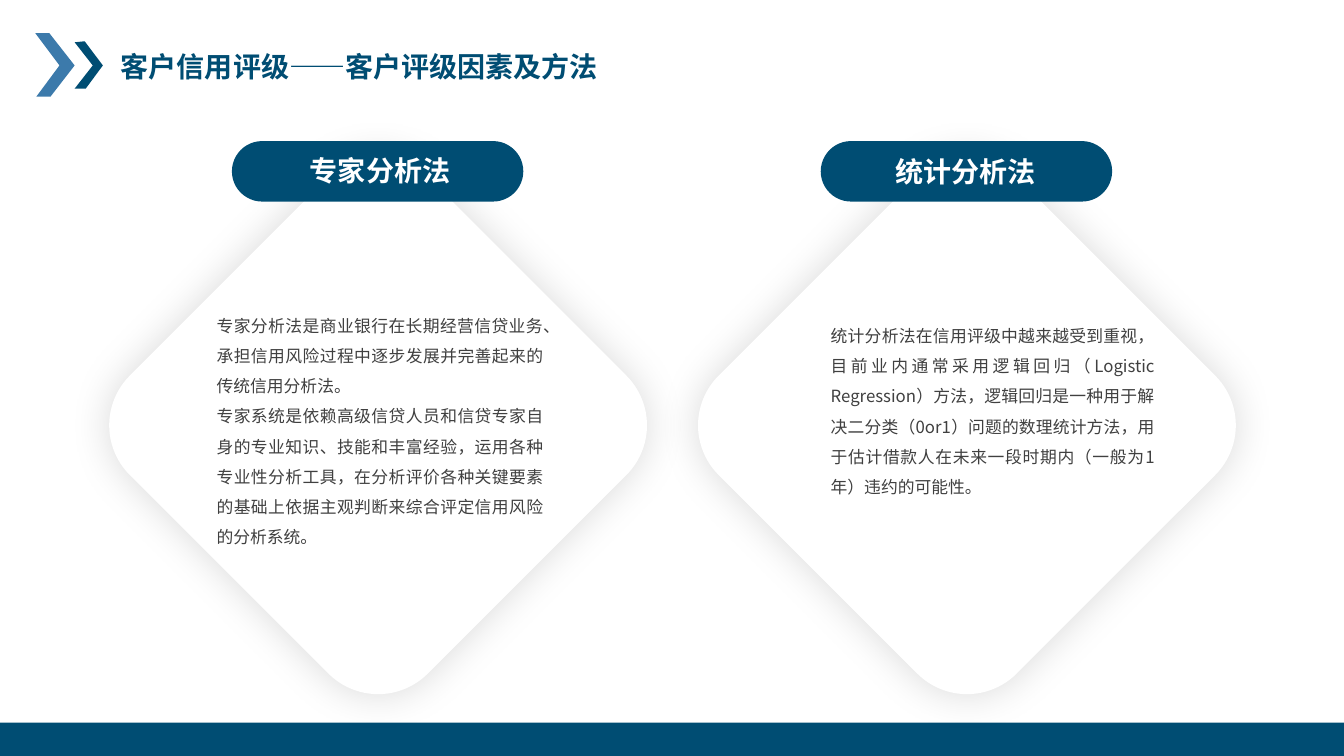
"""Build a slide comparing two customer credit rating methods."""
from dataclasses import dataclass

from lxml.etree import SubElement
from pptx import Presentation
from pptx.dml.color import RGBColor
from pptx.enum.lang import MSO_LANGUAGE_ID
from pptx.enum.shapes import MSO_SHAPE
from pptx.enum.text import MSO_ANCHOR, MSO_AUTO_SIZE, PP_ALIGN
from pptx.oxml.ns import qn
from pptx.shapes.autoshape import Shape
from pptx.shapes.shapetree import GroupShapes
from pptx.util import Inches, Pt

NAVY, BLUE, WHITE, GREY = "004D73", "3C7AAB", "FFFFFF", "404040"
FONT = "Noto Sans CJK SC"
HEADING = {"size": Pt(20), "bold": True}
BODY = {"size": Pt(12), "bold": False}
LEFT_ALIGNED = {"alignment": PP_ALIGN.LEFT}
CENTRED = {"alignment": PP_ALIGN.CENTER}
JUSTIFIED = {"alignment": PP_ALIGN.JUSTIFY, "line_spacing": 1.5}
Box = tuple[float, float, float, float]


@dataclass(frozen=True)
class Method:
    """A rating method with its card, label and explanation."""
    name: str
    paragraphs: list[str]
    diamond_left: float
    pill_left: float
    name_box: Box
    body_box: Box


@dataclass(frozen=True)
class Chevron:
    """An arrow-shaped outline beside the title."""
    points: list[tuple[float, float]]
    color: str


METHODS = [
    Method(
        "专家分析法",
        ["专家分析法是商业银行在长期经营信贷业务、承担信用风险过程中逐步发展并完善起来的传统信用分析法。",
         "专家系统是依赖高级信贷人员和信贷专家自身的专业知识、技能和丰富经验，运用各种专业性分析工具，"
         "在分析评价各种关键要素的基础上依据主观判断来综合评定信用风险的分析系统。"],
        1.66, 2.3, (2.97, 1.47, 1.6, 0.44), (2.05, 2.98, 3.44, 2.49)),
    Method(
        "统计分析法",
        ["统计分析法在信用评级中越来越受到重视，目前业内通常采用逻辑回归（Logistic Regression）方法，"
         "逻辑回归是一种用于解决二分类（0or1）问题的数理统计方法，"
         "用于估计借款人在未来一段时期内（一般为1年）违约的可能性。"],
        7.5, 8.14, (8.78, 1.48, 1.6, 0.44), (8.14, 3.08, 3.41, 1.88)),
]

CHEVRONS = [
    Chevron([(0.35, 0.33), (0.49, 0.33), (0.74, 0.65),
             (0.5, 0.96), (0.36, 0.96), (0.59, 0.65)], BLUE),
    Chevron([(0.74, 0.42), (0.84, 0.41), (1.02, 0.65),
             (0.85, 0.88), (0.74, 0.88), (0.92, 0.65)], NAVY),
]


def paint(shape: Shape, color: str) -> None:
    """Give a shape a flat fill with neither line nor shadow."""
    shape.shadow.inherit = False
    shape.fill.solid()
    shape.fill.fore_color.rgb = RGBColor.from_string(color)
    shape.line.fill.background()


def add_block(shapes: GroupShapes, kind: MSO_SHAPE, box: Box, color: str) -> Shape:
    """Add a flat preset shape."""
    block = shapes.add_shape(kind, *map(Inches, box))
    paint(block, color)
    return block


def add_glow(shape: Shape) -> None:
    """Add a soft, centred outer shadow."""
    effects = shape.element.spPr.find(qn("a:effectLst"))
    shadow = SubElement(effects, qn("a:outerShdw"), blurRad=str(Pt(30)), dist="0",
                        dir="0", algn="ctr", rotWithShape="0")
    tint = SubElement(shadow, qn("a:srgbClr"), val="000000")
    SubElement(tint, qn("a:alpha"), val="15000")


def add_text(shapes: GroupShapes, box: Box, paragraphs: list[str], color: str,
             font_format: dict, paragraph_format: dict, wrap: bool = True) -> None:
    """Add a text box with one format for all its paragraphs."""
    frame = shapes.add_textbox(*map(Inches, box)).text_frame
    frame_format = {"word_wrap": wrap, "auto_size": MSO_AUTO_SIZE.SHAPE_TO_FIT_TEXT,
                    "vertical_anchor": MSO_ANCHOR.TOP}
    shared_font = {"name": FONT, "language_id": MSO_LANGUAGE_ID.SIMPLIFIED_CHINESE}
    frame.text = "\n".join(paragraphs)
    apply_format(frame, frame_format)
    for paragraph in frame.paragraphs:
        apply_format(paragraph, paragraph_format)
        for run in paragraph.runs:
            apply_format(run.font, shared_font | font_format)
            run.font.color.rgb = RGBColor.from_string(color)
            SubElement(run.font._element, qn("a:ea"), typeface=FONT)


def apply_format(target: object, values: dict) -> None:
    """Set each named attribute on the target."""
    for name, value in values.items():
        setattr(target, name, value)


def add_chevron(shapes: GroupShapes, chevron: Chevron) -> None:
    """Draw a chevron as a closed outline."""
    start, *rest = [(Inches(x), Inches(y)) for x, y in chevron.points]
    outline = shapes.build_freeform(*start)
    outline.add_line_segments(rest, close=True)
    paint(outline.convert_to_shape(), chevron.color)


def add_method(shapes: GroupShapes, method: Method) -> None:
    """Draw a diamond card with its explanation and label."""
    diamond = add_block(shapes, MSO_SHAPE.ROUNDED_RECTANGLE,
                        (method.diamond_left, 2.13, 4.18, 4.18), WHITE)
    diamond.rotation = 45
    add_glow(diamond)
    add_text(shapes, method.body_box, method.paragraphs, GREY, BODY, JUSTIFIED)
    pill = add_block(shapes, MSO_SHAPE.ROUNDED_RECTANGLE,
                     (method.pill_left, 1.4, 2.89, 0.6), NAVY)
    pill.adjustments[0] = 0.5
    add_text(shapes, method.name_box, [method.name], WHITE, HEADING, CENTRED, wrap=False)


def main() -> None:
    """Build and save the slide."""
    deck = Presentation()
    deck.slide_width, deck.slide_height = Inches(13.33), Inches(7.5)
    slide = deck.slides.add_slide(deck.slide_layouts[6])
    slide.background.fill.solid()
    slide.background.fill.fore_color.rgb = RGBColor.from_string(WHITE)

    decoration = slide.shapes.add_group_shape().shapes
    for chevron in CHEVRONS:
        add_chevron(decoration, chevron)
    add_block(decoration, MSO_SHAPE.RECTANGLE, (0, 7.17, 13.33, 0.33), NAVY)
    add_text(slide.shapes, (1.1, 0.44, 5.79, 0.44), ["客户信用评级——客户评级因素及方法"],
             NAVY, HEADING, LEFT_ALIGNED)
    for method in METHODS:
        add_method(slide.shapes.add_group_shape().shapes, method)
    deck.save("out.pptx")


if __name__ == "__main__":
    main()
